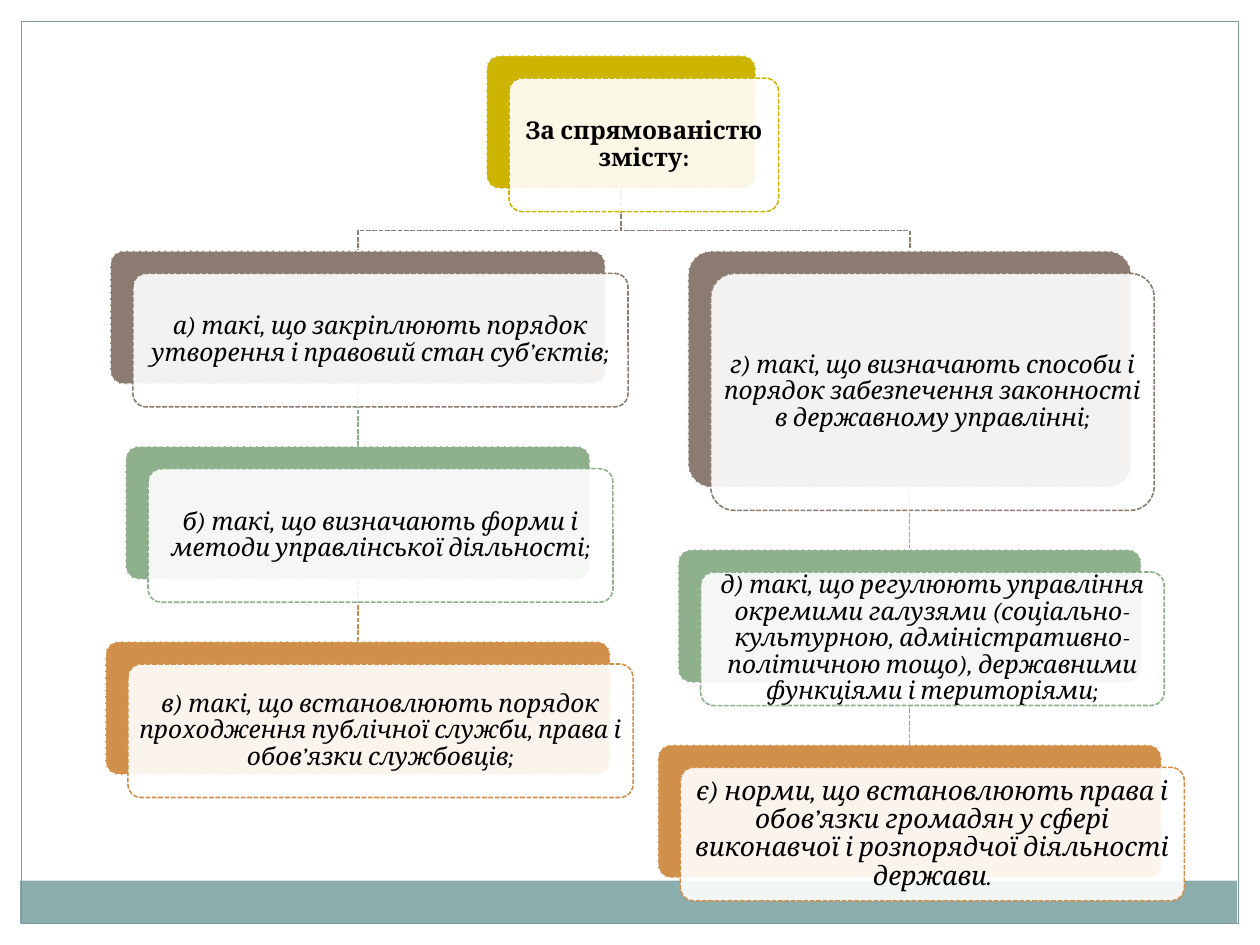
import pptx
import pptx.util
import pptx.dml.color
import pptx.enum.dml
import pptx.enum.shapes
import pptx.enum.text
import pptx.oxml.ns
from lxml import etree

Inches = pptx.util.Inches
Pt = pptx.util.Pt
SHAPES = pptx.enum.shapes.MSO_SHAPE

GOLD, BROWN, GREEN, ORANGE = "CCB400", "8C7B70", "8FB08C", "D19049"
WHITE, BLACK, BAND, BORDER = "FFFFFF", "000000", "8CADAE", "7C999A"

HEADING = "За спрямованістю змісту:"
ROOT_CENTER, ROOT_TOP, ROOT_WIDTH, CARD_HEIGHT = 4.93, 0.44, 2.14, 1.06
GAP, OFFSET, BUS_RISE, INSET = 0.49, 0.18, 0.16, 0.06

BRANCHES = [
    (2.84, [
        ("а) такі, що закріплюють порядок утворення і правовий стан суб’єктів;",
         BROWN, 3.93, CARD_HEIGHT, 14),
        ("б) такі, що визначають форми і методи управлінської діяльності;",
         GREEN, 3.69, CARD_HEIGHT, 14),
        ("в) такі, що встановлюють порядок проходження публічної служби, "
         "права і обов’язки службовців;", ORANGE, 4.01, CARD_HEIGHT, 14),
    ]),
    (7.22, [
        ("г) такі, що визначають способи і порядок забезпечення законності "
         "в державному управлінні;", BROWN, 3.52, 1.88, 14),
        ("д) такі, що регулюють управління окремими галузями "
         "(соціально-культурною, адміністративно-політичною тощо), "
         "державними функціями і територіями;", GREEN, 3.68, CARD_HEIGHT, 14),
        ("є) норми, що встановлюють права і обов’язки громадян у сфері "
         "виконавчої і розпорядчої діяльності держави.",
         ORANGE, 4, CARD_HEIGHT, 15),
    ]),
]


def paint(color_format, color):
    color_format.rgb = pptx.dml.color.RGBColor.from_string(color)


def dash(line, color):
    paint(line.color, color)
    line.width = Pt(0.9)
    line.dash_style = pptx.enum.dml.MSO_LINE.SQUARE_DOT


def add_block(slide, preset, box, fill=None):
    block = slide.shapes.add_shape(preset, *map(Inches, box))
    block.shadow.inherit = False
    if fill:
        block.fill.solid()
        paint(block.fill.fore_color, fill)
    else:
        block.fill.background()
    return block


def add_rounded(slide, box, fill, outline):
    rounded = add_block(slide, SHAPES.ROUNDED_RECTANGLE, box, fill)
    rounded.adjustments[0] = 0.1
    dash(rounded.line, outline)
    return rounded


def write(frame, text, size, inset, bold=False, italic=False):
    frame.text = text
    frame.word_wrap = True
    frame.auto_size = pptx.enum.text.MSO_AUTO_SIZE.NONE
    frame.vertical_anchor = pptx.enum.text.MSO_ANCHOR.MIDDLE
    frame.margin_left = frame.margin_right = Inches(inset)
    frame.margin_top = frame.margin_bottom = Inches(inset)
    paragraph = frame.paragraphs[0]
    paragraph.alignment = pptx.enum.text.PP_ALIGN.CENTER
    paragraph.line_spacing = 0.9
    paragraph.space_before = Pt(0)
    font = paragraph.runs[0].font
    font.name, font.size, font.bold, font.italic = "Cambria", Pt(size), bold, italic
    paint(font.color, BLACK)


def add_card(slide, center, top, width, height, color):
    left = center - width / 2
    add_rounded(slide, (left, top, width, height), color, WHITE)
    front_box = (left + OFFSET, top + OFFSET, width, height)
    front = add_rounded(slide, front_box, WHITE, color)
    tint = front.fill._xPr.find(".//" + pptx.oxml.ns.qn("a:srgbClr"))
    etree.SubElement(tint, pptx.oxml.ns.qn("a:alpha"), val="90000")
    return front


def add_link(slide, center, top, bottom, color):
    link = slide.shapes.add_connector(
        pptx.enum.shapes.MSO_CONNECTOR.STRAIGHT,
        *map(Inches, (center, top, center, bottom)))
    dash(link.line, color)
    etree.SubElement(link._element.spPr, pptx.oxml.ns.qn("a:effectLst"))


def add_elbow(slide, center, top, bottom, color):
    bus = bottom - BUS_RISE
    corners = [(ROOT_CENTER, bus), (center, bus), (center, bottom)]
    builder = slide.shapes.build_freeform(Inches(ROOT_CENTER), Inches(top))
    builder.add_line_segments(
        [(Inches(x), Inches(y)) for x, y in corners], close=False)
    elbow = builder.convert_to_shape()
    elbow.shadow.inherit = False
    elbow.fill.background()
    dash(elbow.line, color)


def main():
    deck = pptx.Presentation()
    deck.slide_width, deck.slide_height = Inches(10), Inches(7.5)
    slide = deck.slides.add_slide(deck.slide_layouts[5])

    band = add_block(slide, SHAPES.RECTANGLE, (0.16, 6.99, 9.66, 0.34), BAND)
    band.line.fill.background()
    border = add_block(slide, SHAPES.RECTANGLE, (0.17, 0.17, 9.66, 7.16))
    paint(border.line.color, BORDER)
    border.line.width = Pt(0.75)

    root_bottom = ROOT_TOP + CARD_HEIGHT
    placed = []
    for center, cards in BRANCHES:
        above = root_bottom
        for level, (text, color, width, height, size) in enumerate(cards):
            top = above + GAP
            connect = add_link if level else add_elbow
            connect(slide, center, above, top, color)
            placed.append((text, size, (center, top, width, height, color)))
            above = top + height

    root = add_card(slide, ROOT_CENTER, ROOT_TOP, ROOT_WIDTH, CARD_HEIGHT, GOLD)
    heading = slide.shapes.title
    heading.left, heading.top = root.left, root.top
    heading.width, heading.height = root.width, root.height
    write(heading.text_frame, HEADING, 14, INSET, bold=True)
    slide.shapes._spTree.append(heading._element)

    for text, size, place in placed:
        card = add_card(slide, *place)
        corner_inset = 0.03 * place[3]
        write(card.text_frame, text, size, INSET - corner_inset, italic=True)

    deck.save("out.pptx")


if __name__ == "__main__":
    main()
